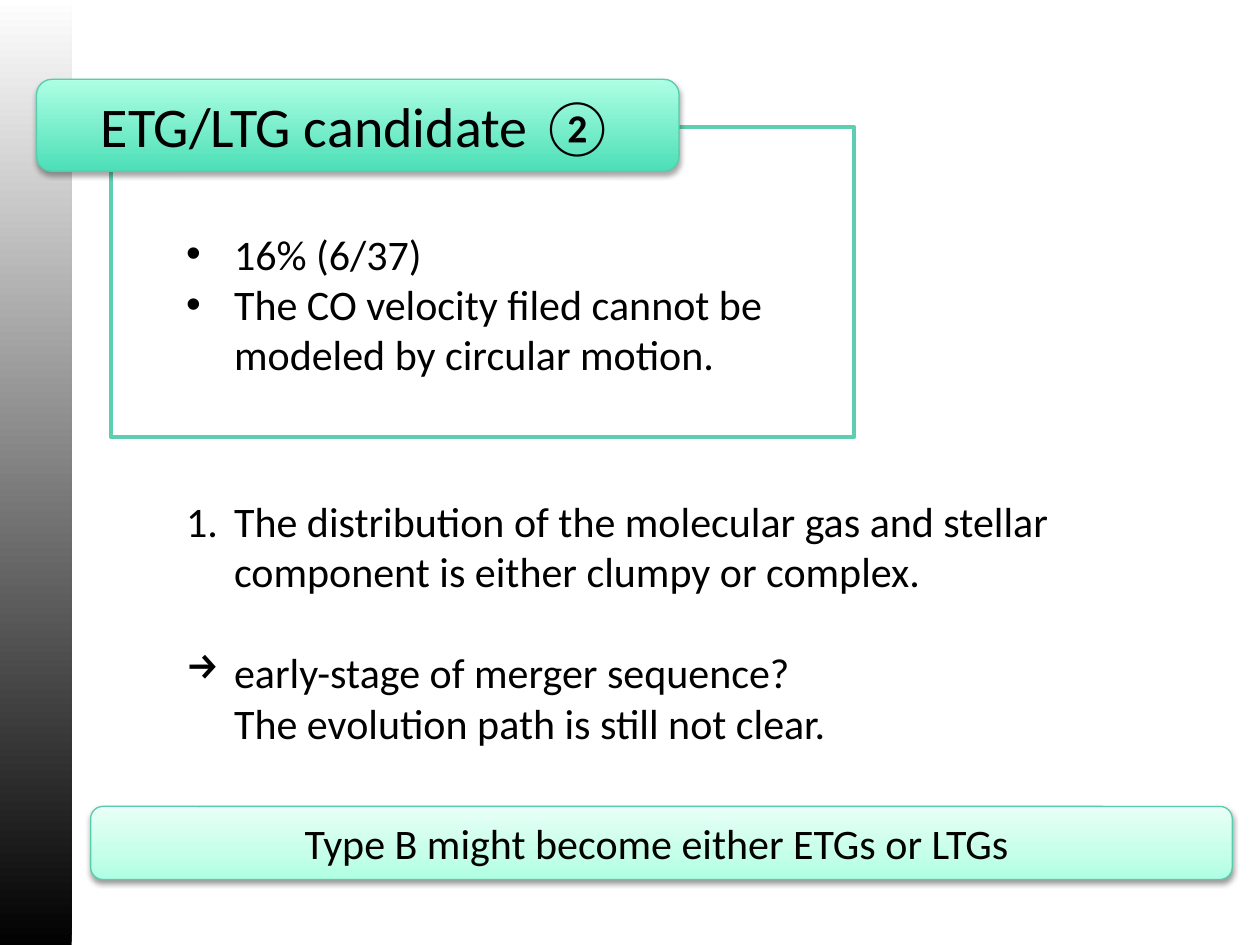
import copy

import pptx
import pptx.dml.color
import pptx.enum.shapes
import pptx.enum.text
import pptx.oxml
import pptx.oxml.ns
import pptx.util

Inches, Pt = pptx.util.Inches, pptx.util.Pt
RGB = pptx.dml.color.RGBColor.from_string
SHAPE = pptx.enum.shapes.MSO_SHAPE
ALIGN = pptx.enum.text.PP_ALIGN
ANCHOR = pptx.enum.text.MSO_ANCHOR
qn = pptx.oxml.ns.qn
NS = 'xmlns:a="http://schemas.openxmlformats.org/drawingml/2006/main"'

COLORS = {
    "text": "000000", "white": "FFFFFF", "black": "000000",
    "frame": "5DCEAF", "edge": "58CCAC",
    "teal": "4CDFB7", "mint": "AEFFE3", "pale": "C5FFEA", "faint": "E9FFF7",
}
BULLETS = {
    "dot": f'<a:buFont {NS} typeface="Arial"/>|<a:buChar {NS} char="•"/>',
    "number": f'<a:buAutoNum {NS} type="arabicPeriod"/>',
    "arrow": f'<a:buChar {NS} char="→"/>',
    "none": f'<a:buNone {NS}/>',
}


def add_text(frame, text, size=24, align=ALIGN.LEFT, bullet=None, hanging=0, before=0):
    """Write one paragraph, using the frame's empty first paragraph if it is free."""
    first = frame.paragraphs[0]
    paragraph = frame.add_paragraph() if first.runs else first
    paragraph.alignment = align
    if before:
        paragraph.space_before = Pt(before)
    if bullet:
        paragraph.level = 1
        props = paragraph._p.get_or_add_pPr()
        props.set("marL", str(Inches(0.88)))
        props.set("indent", str(-Inches(hanging)))
        for element in BULLETS[bullet].split("|"):
            props.append(pptx.oxml.parse_xml(element))
    run = paragraph.add_run()
    run.text = text
    run.font.name = "Calibri"
    run.font.size = Pt(size)
    run.font.color.rgb = RGB(COLORS["text"])


def fill_upward(shape, stops):
    """Fill with a gradient running from bottom to top through (position, color) stops."""
    shape.fill.gradient()
    shape.fill.gradient_angle = 90
    stop_list = shape.fill._fill._gradFill.find(qn("a:gsLst"))
    while len(stop_list) < len(stops):
        stop_list.append(copy.deepcopy(stop_list[0]))
    for stop, (position, color) in zip(shape.fill.gradient_stops, stops):
        stop.position = position
        stop.color.rgb = RGB(COLORS[color])


deck = pptx.Presentation()
deck.slide_width, deck.slide_height = Inches(10), Inches(7.5)
slide = deck.slides.add_slide(deck.slide_layouts[6])
shapes = slide.shapes

# Side band
band = shapes.add_shape(SHAPE.RECTANGLE, Inches(0), Inches(-0.02), Inches(0.57), Inches(7.56))
band.shadow.inherit = False
band.line.fill.background()
fill_upward(band, [(0, "black"), (1, "white")])

# Framed findings
findings = shapes.add_shape(SHAPE.RECTANGLE, Inches(0.88), Inches(1.01), Inches(5.9), Inches(2.46))
findings.shadow.inherit = False
findings.fill.solid()
findings.fill.fore_color.rgb = RGB(COLORS["white"])
findings.line.color.rgb = RGB(COLORS["frame"])
findings.line.width = Pt(2)
findings_text = findings.text_frame
findings_text.word_wrap = True
findings_text.vertical_anchor = ANCHOR.TOP
findings_text.margin_top = Inches(0.8)
for finding in ("16% (6/37)", "The CO velocity filed cannot be modeled by circular motion."):
    add_text(findings_text, finding, bullet="dot", hanging=0.38)

# Interpretation
interpretation = shapes.add_textbox(Inches(0.88), Inches(3.47), Inches(8.64), Inches(2.93)).text_frame
interpretation.word_wrap = True
interpretation.margin_top = Inches(0.46)
add_text(interpretation,
         "The distribution of the molecular gas and stellar component is either clumpy or complex.",
         bullet="number", hanging=0.38)
add_text(interpretation, "early-stage of merger sequence?", bullet="arrow", hanging=0.38, before=29)
add_text(interpretation, "The evolution path is still not clear.", bullet="none")

# Title and conclusion banners: place, stops, shadow opacity and distance, text, size
banners = [
    ((0.29, 0.63, 5.1, 0.73), [(0, "teal"), (1, "mint")], 35, 1.8,
     "ETG/LTG candidate ②", 32),
    ((0.72, 6.4, 9.06, 0.58), [(0, "mint"), (0.35, "pale"), (1, "faint")], 38, 1.6,
     "Type B might become either ETGs or LTGs ", 24),
]
for place, stops, opacity, distance, text, size in banners:
    banner = shapes.add_shape(SHAPE.ROUNDED_RECTANGLE, *map(Inches, place))
    fill_upward(banner, stops)
    banner.line.color.rgb = RGB(COLORS["edge"])
    banner.line.width = Pt(0.75)
    banner.shadow.inherit = False
    banner._element.spPr.find(qn("a:effectLst")).append(pptx.oxml.parse_xml(
        f'<a:outerShdw {NS} blurRad="{Pt(3.1)}" dist="{Pt(distance)}" dir="5400000" rotWithShape="0">'
        f'<a:srgbClr val="{COLORS["black"]}"><a:alpha val="{opacity * 1000}"/></a:srgbClr></a:outerShdw>'))
    banner.text_frame.word_wrap = True
    banner.text_frame.vertical_anchor = ANCHOR.MIDDLE
    add_text(banner.text_frame, text, size=size, align=ALIGN.CENTER)

deck.save("out.pptx")
